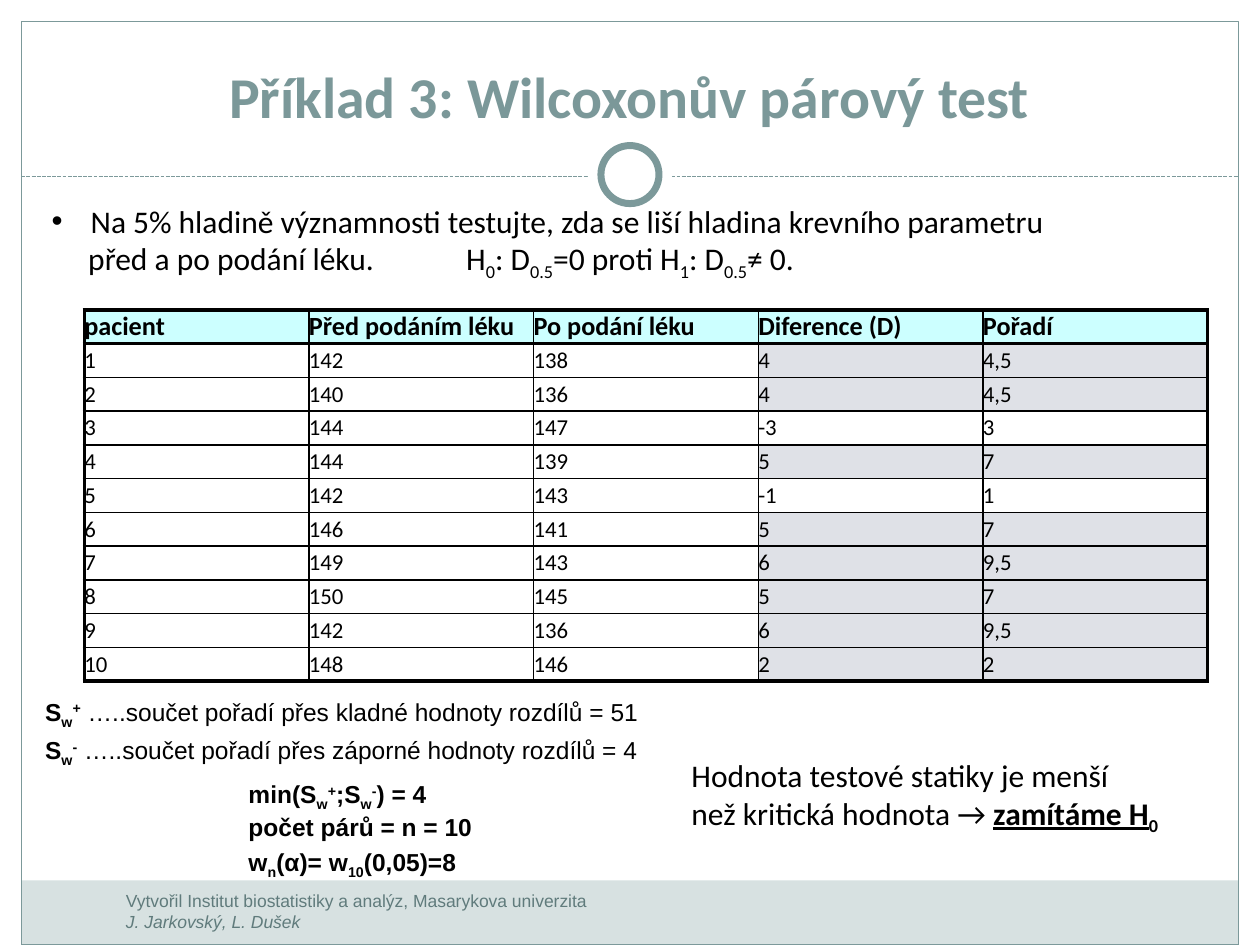
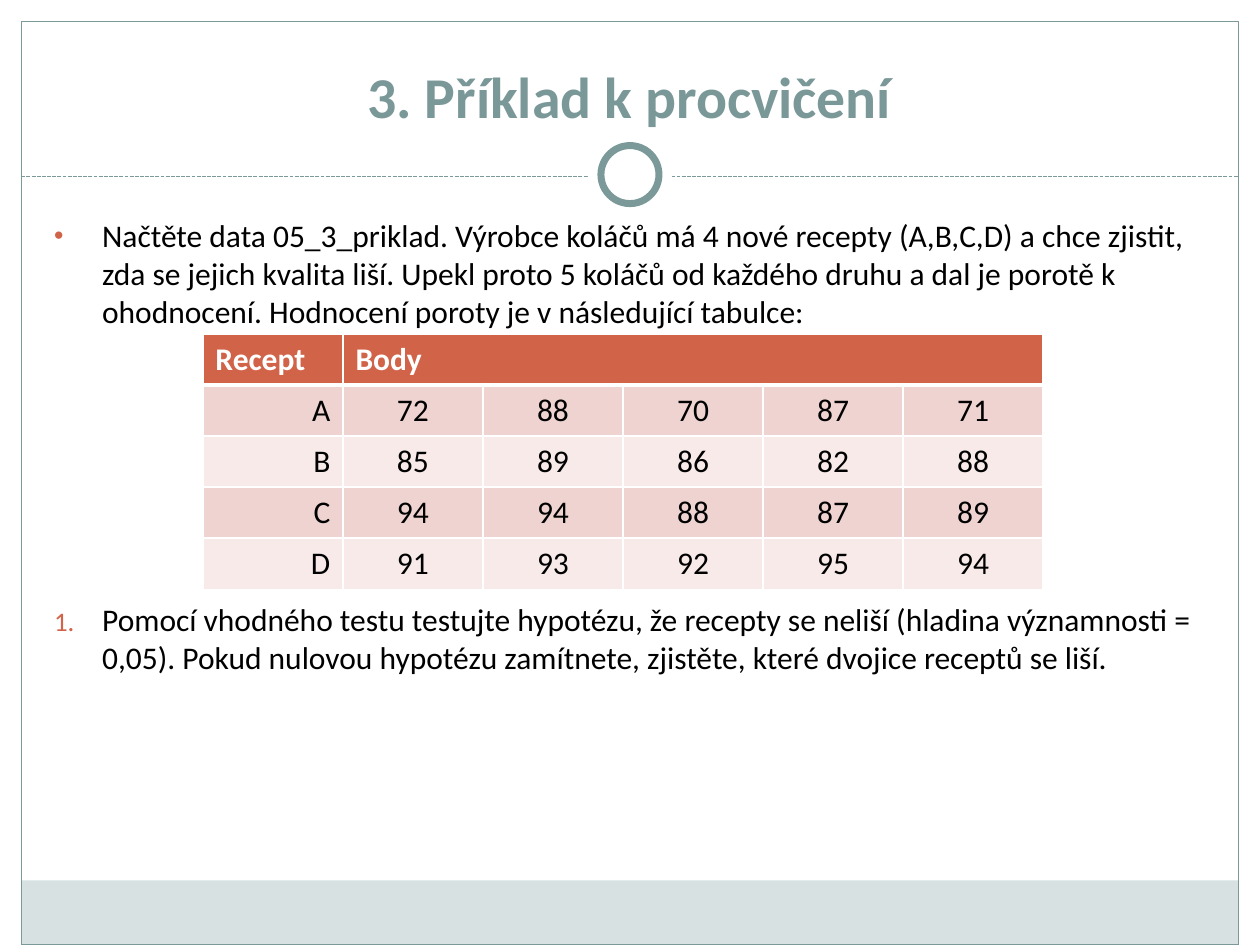
from lxml.etree import SubElement as Sub
from pptx import Presentation
from pptx.dml.color import RGBColor as RGB
from pptx.enum.dml import MSO_LINE as Dash
from pptx.enum.shapes import MSO_CONNECTOR as Link, MSO_SHAPE as Form
from pptx.enum.text import MSO_ANCHOR as Anchor, MSO_AUTO_SIZE as Auto, PP_ALIGN as Align
from pptx.oxml.ns import qn
from pptx.util import Cm, Pt

HUES = {
    "white": "FFFFFF", "black": "000000", "frame": "7C999A", "band": "D7E1E1",
    "title": "7B9899", "foot": "607B7C", "aqua": "CCFFFF", "gray": "DFE1E7",
    "rust": "D16349", "rose": "EED3D0", "pale": "F7EAE9",
}
WIDE, HIGH = 25.4, 19.05

TEST = "Příklad 3: Wilcoxonův párový test"
TASK = "3. Příklad k procvičení"

CREDIT = [{"runs": ["Vytvořil Institut biostatistiky a analýz, Masarykova univerzita", "\n",
                    ("J. Jarkovský, L. Dušek", "i")]}]
CLAIM = [
    {"mark": "•", "left": 0.79, "hang": 0.79,
     "runs": ["Na 5% hladině významnosti testujte, zda se liší hladina krevního parametru"]},
    {"left": 0.74,
     "runs": ["před a po podání léku.\t\tH", ("0", "-"), ": D", ("0.5", "-"), "=0 proti H",
              ("1", "-"), ": D", ("0.5", "-"), "≠ 0."]},
]
SUMS = [
    {"runs": [("S", "b"), ("w", "b-"), ("+", "b+"),
              " …..součet pořadí přes kladné hodnoty rozdílů = 51"]},
    {"gap": 2.8,
     "runs": [("S", "b"), ("w", "b-"), ("-", "b+"),
              " …..součet pořadí přes záporné hodnoty rozdílů = 4"]},
    {"gap": 6, "left": 4.1,
     "runs": [("min(S", "b"), ("w", "b-"), ("+", "b+"), (";S", "b"), ("w", "b-"), ("-", "b+"),
              (") = 4", "b"), "\n", ("počet párů = n = 10", "b")]},
    {"gap": 2.8, "left": 4.1,
     "runs": [("w", "b"), ("n", "b-"), ("(α)= w", "b"), ("10", "b-"), ("(0,05)=8", "b")]},
]
VERDICT = [
    {"runs": ["Hodnota testové statiky je menší"]},
    {"runs": ["než kritická hodnota → ", ("zamítáme H", "bu"), ("0", "b-")]},
]
HEADS = ["pacient", "Před podáním léku", "Po podání léku", "Diference (D)", "Pořadí"]
BEFORE = [142, 140, 144, 144, 142, 146, 149, 150, 142, 148]
AFTER = [138, 136, 147, 139, 143, 141, 143, 145, 136, 146]
RANKS = ["4,5", "4,5", "3", "7", "1", "7", "9,5", "7", "9,5", "2"]

BRIEF = [
    {"mark": "•", "hue": "rust", "left": 0.97, "hang": 0.97,
     "runs": ["Načtěte data 05_3_priklad. Výrobce koláčů má 4 nové recepty (A,B,C,D) a chce "
              "zjistit, zda se jejich kvalita liší. Upekl proto 5 koláčů od každého druhu a dal "
              "je porotě k ohodnocení. Hodnocení poroty je v následující tabulce:"]},
    {"mark": "1.", "hue": "rust", "left": 0.97, "hang": 0.97, "gap": 154.5,
     "runs": ["Pomocí vhodného testu testujte hypotézu, že recepty se neliší (hladina "
              "významnosti = 0,05). Pokud nulovou hypotézu zamítnete, zjistěte, které dvojice "
              "receptů se liší."]},
]
SCORES = {
    "A": [72, 88, 70, 87, 71],
    "B": [85, 89, 86, 82, 88],
    "C": [94, 94, 88, 87, 89],
    "D": [91, 93, 92, 95, 94],
}


def tint(name):
    return RGB.from_string(HUES[name])


def style(para, size, face, hue, bold=None):
    font = para.font
    font.size, font.name, font.bold = Pt(size), face, bold
    font.color.rgb = tint(hue)


def bullet(props, mark, hue):
    if hue:
        Sub(Sub(props, qn("a:buClr")), qn("a:srgbClr"), val=HUES[hue])
        Sub(props, qn("a:buSzPct"), val="85000")
    if mark == "1.":
        Sub(props, qn("a:buAutoNum"), type="arabicPeriod")
    else:
        Sub(props, qn("a:buFont"), typeface="Arial")
        Sub(props, qn("a:buChar"), char=mark)


def write(para, runs):
    for part in runs:
        if part == "\n":
            para.add_line_break()
            continue
        words, flags = part if isinstance(part, tuple) else (part, "")
        run = para.add_run()
        run.text = words
        if "b" in flags:
            run.font.bold = True
        if "i" in flags:
            run.font.italic = True
        if "u" in flags:
            run.font.underline = True
        for sign, shift in (("-", "-25000"), ("+", "30000")):
            if sign in flags:
                run._r.get_or_add_rPr().set("baseline", shift)


def note(slide, spot, paras, size=18, face="Calibri", hue="black"):
    frame = slide.shapes.add_textbox(*map(Cm, spot)).text_frame
    frame.word_wrap = True
    for i, item in enumerate(paras):
        para = frame.add_paragraph() if i else frame.paragraphs[0]
        props = para._p.get_or_add_pPr()
        props.set("marL", str(Cm(item.get("left", 0))))
        props.set("indent", str(-Cm(item.get("hang", 0))))
        if "mark" in item:
            bullet(props, item["mark"], item.get("hue"))
        if "gap" in item:
            para.space_before = Pt(item["gap"])
        style(para, size, face, hue)
        write(para, item["runs"])


def shape(slide, form, spot, fill=None, line=None, width=0.75):
    item = slide.shapes.add_shape(form, *map(Cm, spot))
    item.shadow.inherit = False
    if fill:
        item.fill.solid()
        item.fill.fore_color.rgb = tint(fill)
    else:
        item.fill.background()
    if line:
        item.line.color.rgb = tint(line)
        item.line.width = Pt(width)
    else:
        item.line.fill.background()


def disc(slide, size, **look):
    shape(slide, Form.OVAL, ((WIDE - size) / 2, 3.52 - size / 2, size, size), "white", **look)


def page(deck, head):
    slide = deck.slides.add_slide(deck.slide_layouts[5])
    edge = 0.43
    span = WIDE - 2 * edge
    shape(slide, Form.RECTANGLE, (edge, 17.75, span, 1.3), "band")
    shape(slide, Form.RECTANGLE, (edge, edge, span, HIGH - edge), line="frame")
    rule = slide.shapes.add_connector(
        Link.STRAIGHT, Cm(edge), Cm(3.56), Cm(WIDE - edge), Cm(3.56))
    rule.line.color.rgb = tint("frame")
    rule.line.width = Pt(0.75)
    rule.line.dash_style = Dash.SQUARE_DOT
    Sub(rule._element.spPr, qn("a:effectLst"))
    disc(slide, 1.7)
    disc(slide, 1.17, line="frame", width=4)
    title = slide.shapes.title
    title.left, title.top, title.width, title.height = map(Cm, (0.84, 0.64, 23.7, 2.11))
    frame = title.text_frame
    frame.text = head
    frame.auto_size, frame.vertical_anchor = Auto.NONE, Anchor.BOTTOM
    frame.paragraphs[0].alignment = Align.CENTER
    style(frame.paragraphs[0], 33, "Calibri", "title", True)
    return slide


def grid(slide, spot, rows, cols):
    table = slide.shapes.add_table(rows, cols, *map(Cm, spot)).table
    table.first_row = table.horz_banding = False
    for col in table.columns:
        col.width = Cm(spot[2] / cols)
    for row in table.rows:
        row.height = Cm(spot[3] / rows)
    return table


def border(cell, hue, widths):
    props = cell._tc.get_or_add_tcPr()
    for side, width in zip("LRTB", widths):
        line = Sub(props, qn("a:ln" + side), w=str(Pt(width)))
        Sub(Sub(line, qn("a:solidFill")), qn("a:srgbClr"), val=HUES[hue])


def enter(cell, value, size, hue, bold, fill, align=Align.LEFT):
    if fill:
        cell.fill.solid()
        cell.fill.fore_color.rgb = tint(fill)
    else:
        cell.fill.background()
    cell.text = str(value)
    para = cell.text_frame.paragraphs[0]
    para.alignment = align
    style(para, size, "Calibri", hue, bold)


def patients(slide):
    rows = [HEADS] + [
        (i, pre, post, pre - post, rank)
        for i, (pre, post, rank) in enumerate(zip(BEFORE, AFTER, RANKS), 1)]
    last, end = len(rows) - 1, len(HEADS) - 1
    table = grid(slide, (1.7, 6.25, 22.65, 7.49), len(rows), len(HEADS))
    for r, row in enumerate(rows):
        for c, value in enumerate(row):
            cell = table.cell(r, c)
            cell.margin_left = cell.margin_right = cell.margin_top = cell.margin_bottom = 0
            cell.vertical_anchor = Anchor.MIDDLE
            thick = (c == 0, c == end, r < 2, r in (0, last))
            border(cell, "black", [2.25 if flag else 1 for flag in thick])
            if r == 0:
                fill = "aqua"
            else:
                fill = "gray" if c > 2 and row[3] > 0 else None
            enter(cell, value, 13 if r else 15, "black", r == 0, fill)


def recipes(slide):
    table = grid(slide, (4.09, 6.73, 16.94, 5.15), len(SCORES) + 1, 6)
    for r, row in enumerate(table.rows):
        for cell in row.cells:
            border(cell, "white", (1, 1, 3 if r == 1 else 1, 1 if r else 3))
    table.cell(0, 1).merge(table.cell(0, 5))
    for c, head in enumerate(("Recept", "Body")):
        enter(table.cell(0, c), head, 18, "white", True, "rust")
    for r, (name, marks) in enumerate(SCORES.items(), 1):
        for c, value in enumerate([name] + marks):
            enter(table.cell(r, c), value, 18, "black", False, "rose" if r % 2 else "pale",
                  Align.CENTER if c else Align.RIGHT)


def main():
    deck = Presentation()
    deck.slide_width, deck.slide_height = Cm(WIDE), Cm(HIGH)

    slide = page(deck, TEST)
    note(slide, (2.29, 17.81, 9.96, 1.02), CREDIT, 10, "Arial", "foot")
    patients(slide)
    note(slide, (0.66, 13.92, 24.56, 4.42), SUMS, 14, "Arial")
    note(slide, (0.79, 3.94, 20.9, 1.8), CLAIM)
    note(slide, (13.69, 15.11, 10.21, 1.8), VERDICT)

    slide = page(deck, TASK)
    note(slide, (0.84, 4.24, 23.7, 12.78), BRIEF)
    recipes(slide)
    deck.save("out.pptx")


if __name__ == "__main__":
    main()
